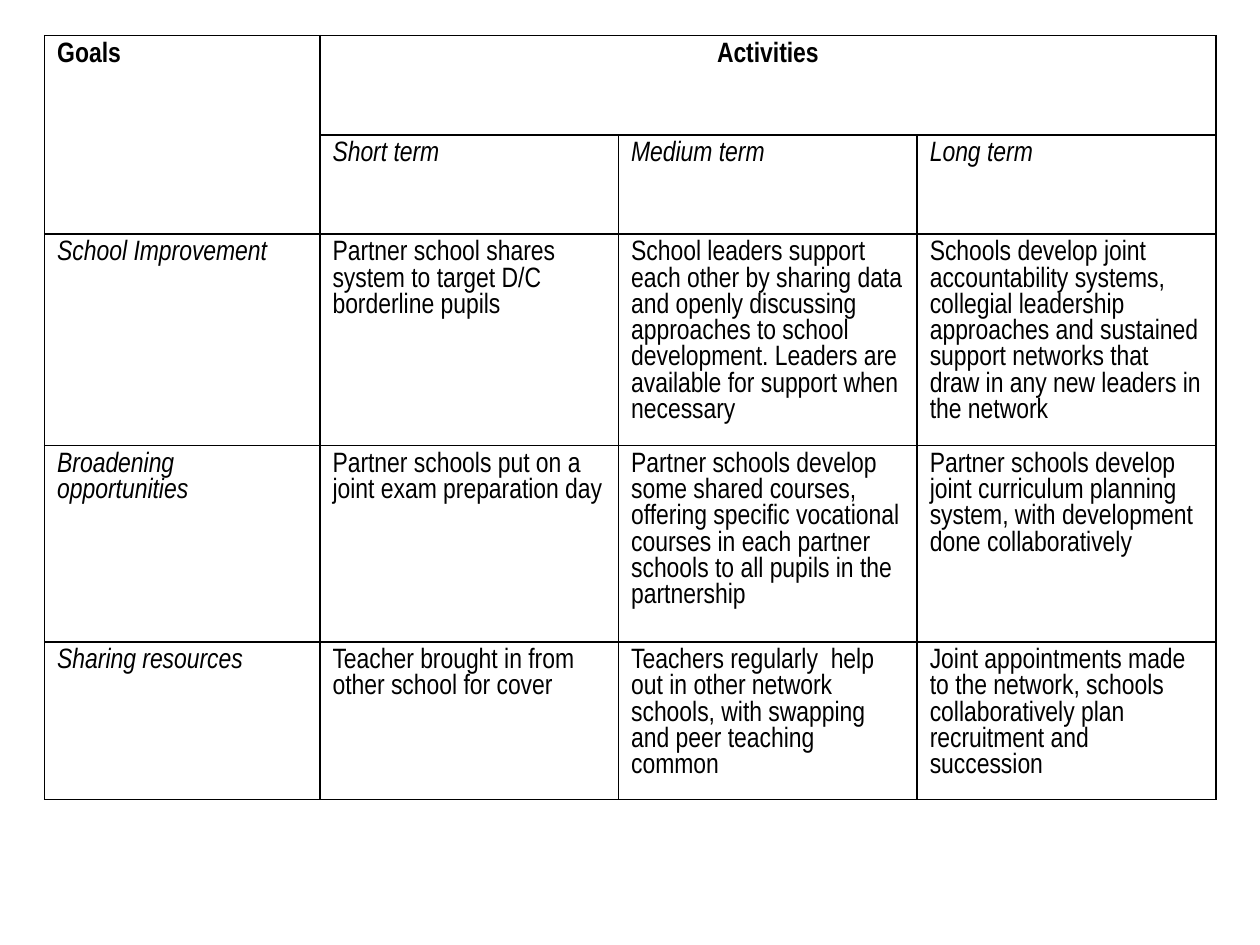
from lxml.etree import SubElement
from pptx import Presentation
from pptx.dml.color import RGBColor
from pptx.enum.text import PP_ALIGN as Align
from pptx.oxml.ns import qn
from pptx.util import Cm, Pt

COLORS = {"ink": "000000"}
BASE_FONT = {"name": "Arial Narrow", "size": Pt(16), "bold": False, "italic": False}
HEADING = {"bold": True}
LABEL = {"italic": True}

COLUMN_WIDTHS = [5.55, 6.02, 6.02, 6.02]
ROW_HEIGHTS = [2, 2, 4.26, 3.96, 3.18]
TERMS = ["Short term", "Medium term", "Long term"]
GOALS = [
    ("School Improvement",
     "Partner school shares system to target D/C borderline pupils",
     "School leaders support each other by sharing data and openly discussing approaches "
     "to school development. Leaders are available for support when necessary",
     "Schools develop joint accountability systems, collegial leadership approaches and "
     "sustained support networks that draw in any new leaders in the network"),
    ("Broadening opportunities",
     "Partner schools put on a joint exam preparation day",
     "Partner schools develop some shared courses, offering specific vocational courses "
     "in each partner schools to all pupils in the partnership",
     "Partner schools develop joint curriculum planning system, with development done "
     "collaboratively"),
    ("Sharing resources",
     "Teacher brought in from other school for cover",
     "Teachers regularly  help out in other network schools, with swapping and peer "
     "teaching common",
     "Joint appointments made to the network, schools collaboratively plan recruitment "
     "and succession"),
]


def add_borders(cell):
    """Draw a one-point line on every side of a cell."""
    properties = cell._tc.get_or_add_tcPr()
    for position, side in enumerate(("lnL", "lnR", "lnT", "lnB")):
        line = SubElement(properties, qn(f"a:{side}"), w=str(Pt(1)))
        fill = SubElement(line, qn("a:solidFill"))
        SubElement(fill, qn("a:srgbClr"), val=COLORS["ink"])
        properties.insert(position, line)


def write_cell(cell, text, style, alignment=Align.LEFT):
    """Write one paragraph into a cell with the given font values."""
    paragraph = cell.text_frame.paragraphs[0]
    paragraph.alignment = alignment
    run = paragraph.add_run()
    run.text = text
    for name, value in {**BASE_FONT, **style}.items():
        setattr(run.font, name, value)
    run.font.color.rgb = RGBColor.from_string(COLORS["ink"])


def add_grid(slide):
    """Add the plain bordered table with its column and row sizes."""
    frame = slide.shapes.add_table(
        len(ROW_HEIGHTS), len(COLUMN_WIDTHS), Cm(0.9), Cm(0.72),
        Cm(sum(COLUMN_WIDTHS)), Cm(sum(ROW_HEIGHTS)))
    table = frame.table
    table.first_row = table.horz_banding = False
    for column, width in zip(table.columns, COLUMN_WIDTHS):
        column.width = Cm(width)
    for row, height in zip(table.rows, ROW_HEIGHTS):
        row.height = Cm(height)
    for cell in table.iter_cells():
        cell.fill.background()
        add_borders(cell)
    return table


def fill_header(table):
    """Merge and label the two header rows."""
    table.cell(0, 0).merge(table.cell(1, 0))
    table.cell(0, 1).merge(table.cell(0, 3))
    write_cell(table.cell(0, 0), "Goals", HEADING)
    write_cell(table.cell(0, 1), "Activities", HEADING, Align.CENTER)
    for column, term in enumerate(TERMS, start=1):
        write_cell(table.cell(1, column), term, LABEL)


def fill_goals(table):
    """Write one row for each goal with its activities."""
    for row, texts in enumerate(GOALS, start=2):
        for column, text in enumerate(texts):
            write_cell(table.cell(row, column), text, {} if column else LABEL)


def main():
    """Build the slide and save it."""
    presentation = Presentation()
    presentation.slide_width, presentation.slide_height = Cm(25.4), Cm(19.05)
    slide = presentation.slides.add_slide(presentation.slide_layouts[6])
    table = add_grid(slide)
    fill_header(table)
    fill_goals(table)
    presentation.save("out.pptx")


if __name__ == "__main__":
    main()
